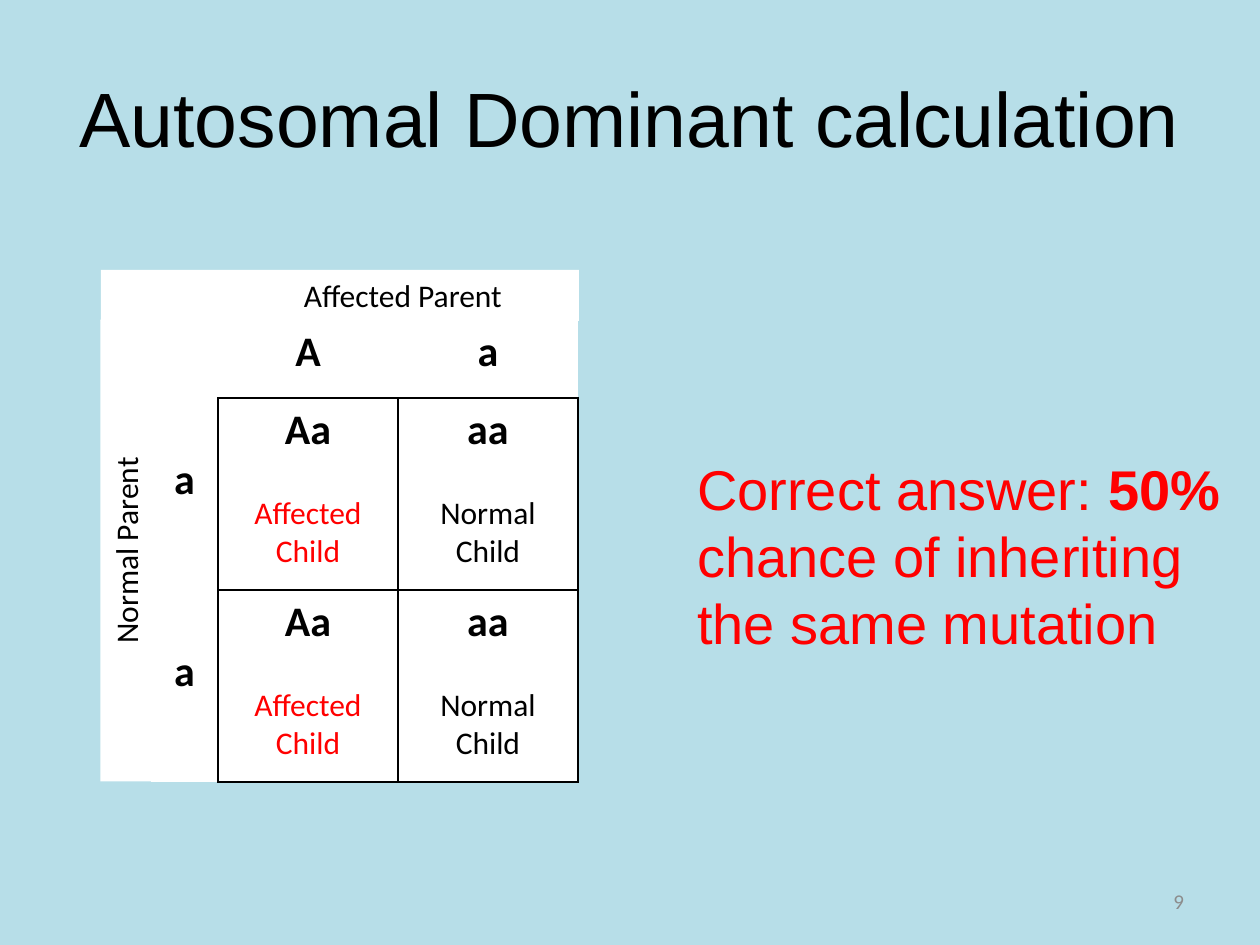
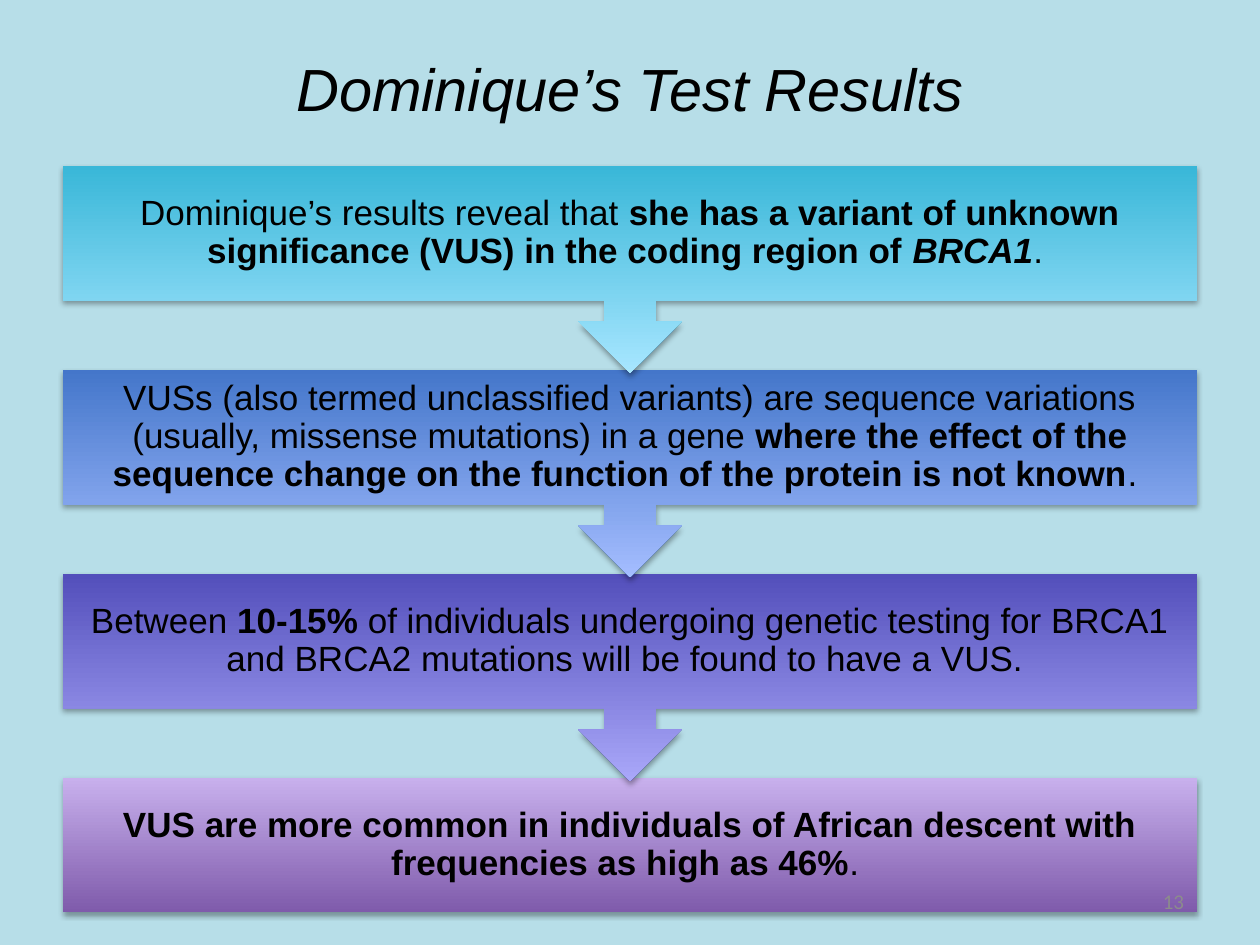
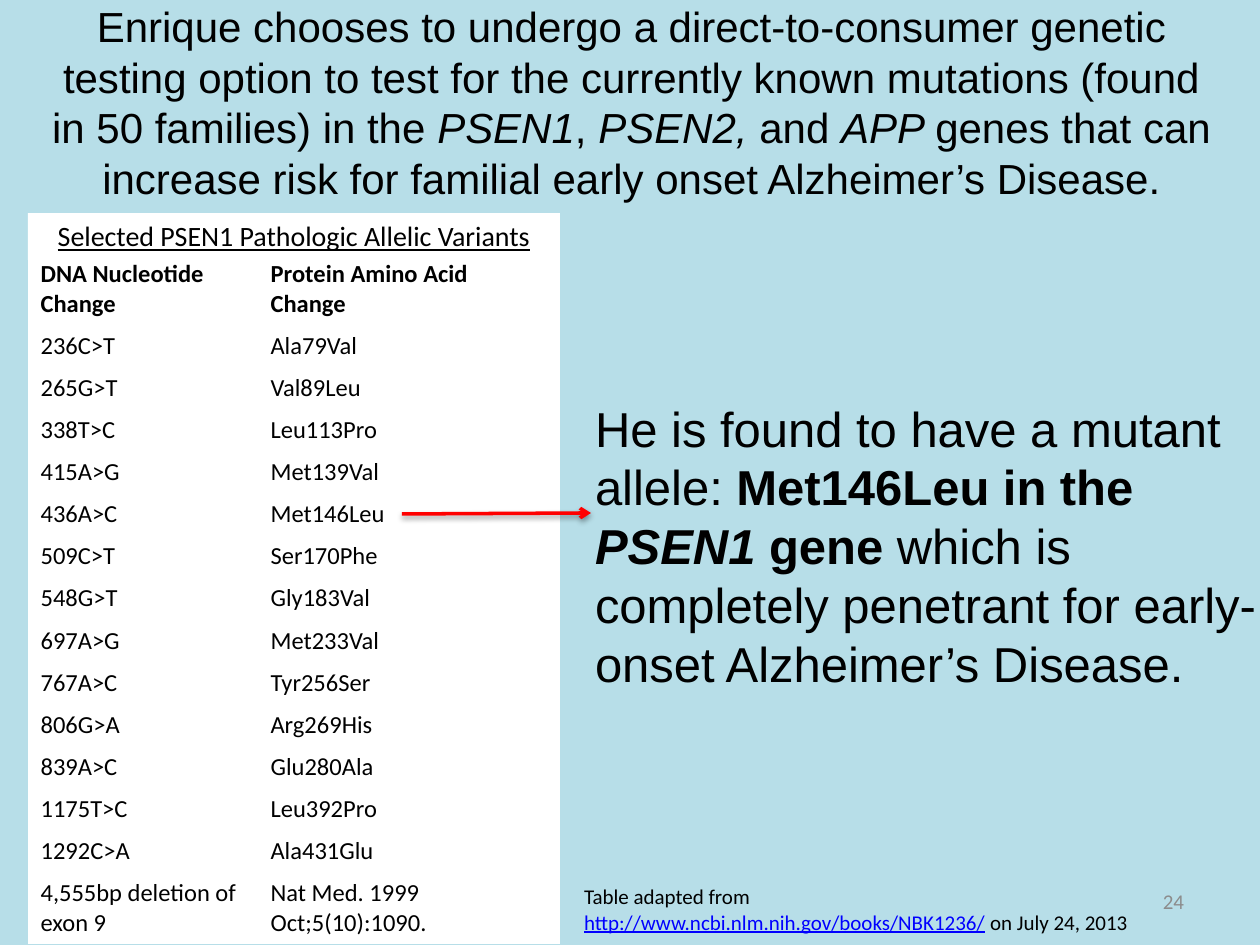
"""Build three genetics teaching slides."""
from dataclasses import dataclass
from typing import NamedTuple

from lxml import etree
from pptx import Presentation
from pptx.dml.color import RGBColor
from pptx.enum.shapes import MSO_CONNECTOR, MSO_SHAPE
from pptx.enum.text import MSO_ANCHOR, PP_ALIGN
from pptx.oxml.ns import qn
from pptx.util import Emu, Pt

LEFT, CENTER, RIGHT = PP_ALIGN.LEFT, PP_ALIGN.CENTER, PP_ALIGN.RIGHT
TOP, MIDDLE = MSO_ANCHOR.TOP, MSO_ANCHOR.MIDDLE
RECTANGLE, CALLOUT = MSO_SHAPE.RECTANGLE, MSO_SHAPE.UP_ARROW_CALLOUT
STRAIGHT = MSO_CONNECTOR.STRAIGHT
PX_PER_INCH = 126
SLIDE_WIDTH, SLIDE_HEIGHT = 1260, 945


@dataclass(frozen=True)
class Theme:
    background: str = "B7DEE8"
    panel: str = "FFFFFF"
    ink: str = "000000"
    accent: str = "FF0000"
    link: str = "0000FF"
    muted: str = "8C8C8C"
    heading_font: str = "Arial"
    table_font: str = "Calibri"
    title: int = 44
    subtitle: int = 34
    answer: int = 32
    finding: int = 28
    lead: int = 24
    allele: int = 24
    step: int = 20
    label: int = 18
    caption: int = 16
    row: int = 14
    small: int = 12


THEME = Theme()


class Box(NamedTuple):
    left: int
    top: int
    width: int
    height: int


class Insets(NamedTuple):
    left: int = 13
    top: int = 6
    right: int = 13
    bottom: int = 6


@dataclass(frozen=True)
class Span:
    text: str
    bold: bool = False
    italic: bool = False
    underline: bool = False
    color: str | None = None


@dataclass(frozen=True)
class Step:
    dark: str
    light: str
    spans: list[Span]


STEPS = [
    Step("39B7D8", "A7E6FF", [
        Span("Dominique’s results reveal that "),
        Span("she has a variant of unknown significance (VUS) in the coding region of ", bold=True),
        Span("BRCA1", bold=True, italic=True),
        Span(". "),
    ]),
    Step("4476CA", "A4BDFF", [
        Span("VUSs (also termed unclassified variants) are sequence variations "
             "(usually, missense mutations) in a gene "),
        Span("where the effect of the sequence change on the function of the protein is not known",
             bold=True),
        Span(". "),
    ]),
    Step("534FBB", "A9A7F9", [
        Span("Between "),
        Span("10-15% ", bold=True),
        Span("of individuals undergoing genetic testing for BRCA1 and BRCA2 mutations "
             "will be found to have a VUS. "),
    ]),
    Step("7F5BAB", "C8B0ED", [
        Span("VUS are more common in individuals of African descent with frequencies "
             "as high as 46%", bold=True),
        Span(". "),
    ]),
]

VARIANTS = [
    ("DNA Nucleotide Change", "Protein Amino Acid Change"),
    ("236C>T", "Ala79Val"),
    ("265G>T", "Val89Leu"),
    ("338T>C", "Leu113Pro"),
    ("415A>G", "Met139Val"),
    ("436A>C", "Met146Leu"),
    ("509C>T", "Ser170Phe"),
    ("548G>T", "Gly183Val"),
    ("697A>G", "Met233Val"),
    ("767A>C", "Tyr256Ser"),
    ("806G>A", "Arg269His"),
    ("839A>C", "Glu280Ala"),
    ("1175T>C", "Leu392Pro"),
    ("1292C>A", "Ala431Glu"),
    ("4,555bp deletion of exon 9", "Nat Med. 1999 Oct;5(10):1090."),
]


def px(length: int) -> Emu:
    return Emu(round(length * 914400 / PX_PER_INCH))


def place(box: Box) -> list[Emu]:
    return [px(length) for length in box]


def rgb(color: str) -> RGBColor:
    return RGBColor.from_string(color)


def write(frame, spans: list[Span], *, size: int, font: str = THEME.heading_font,
          color: str = THEME.ink, align=LEFT, line_spacing: float | None = None,
          space_before: int = 0) -> None:
    first = frame.paragraphs[0]
    paragraph = frame.add_paragraph() if first.runs else first
    paragraph.alignment = align
    paragraph.space_before = Pt(space_before)
    if line_spacing:
        paragraph.line_spacing = line_spacing
    for span in spans:
        run = paragraph.add_run()
        run.text = span.text
        run.font.name, run.font.size = font, Pt(size)
        run.font.bold, run.font.italic = span.bold, span.italic
        run.font.underline = span.underline
        run.font.color.rgb = rgb(span.color or color)


def set_frame(frame, anchor=TOP, insets: Insets = Insets()) -> None:
    frame.word_wrap = True
    frame.vertical_anchor = anchor
    frame.margin_left, frame.margin_top, frame.margin_right, frame.margin_bottom = place(insets)


def add_text(slide, box: Box, spans: list[Span], *, anchor=TOP, insets: Insets = Insets(),
             **text_format) -> None:
    frame = slide.shapes.add_textbox(*place(box)).text_frame
    set_frame(frame, anchor, insets)
    write(frame, spans, **text_format)


def add_panel(slide, box: Box, span: Span, *, size: int, insets: Insets = Insets(),
              rotation: int = 0) -> None:
    panel = slide.shapes.add_shape(RECTANGLE, *place(box))
    panel.rotation = rotation
    panel.shadow.inherit = False
    panel.fill.solid()
    panel.fill.fore_color.rgb = rgb(THEME.panel)
    panel.line.fill.background()
    set_frame(panel.text_frame, insets=insets)
    write(panel.text_frame, [span], size=size, font=THEME.table_font, align=CENTER)


def cast_shadow(shape, opacity: int, distance: int) -> None:
    effects = etree.SubElement(shape.element.spPr, qn("a:effectLst"))
    shadow = etree.SubElement(effects, qn("a:outerShdw"), blurRad="40000", dist=str(distance),
                              dir="5400000", rotWithShape="0")
    shade = etree.SubElement(shadow, qn("a:srgbClr"), val=THEME.ink)
    etree.SubElement(shade, qn("a:alpha"), val=str(opacity * 1000))


def style_cell(cell, ruled_sides: str = "") -> None:
    properties = cell._tc.get_or_add_tcPr()
    for side in "LRTB":
        border = etree.SubElement(properties, qn(f"a:ln{side}"), w="12700")
        if side in ruled_sides:
            fill = etree.SubElement(border, qn("a:solidFill"))
            etree.SubElement(fill, qn("a:srgbClr"), val=THEME.ink)
        else:
            etree.SubElement(border, qn("a:noFill"))
    cell.fill.solid()
    cell.fill.fore_color.rgb = rgb(THEME.panel)


def add_grid(slide, left: int, top: int, widths: list[int], heights: list[int]):
    box = Box(left, top, sum(widths), sum(heights))
    table = slide.shapes.add_table(len(heights), len(widths), *place(box)).table
    table.first_row = table.horz_banding = False
    for column, width in zip(table.columns, widths):
        column.width = px(width)
    for row, height in zip(table.rows, heights):
        row.height = px(height)
    return table


def add_slide(deck):
    slide = deck.slides.add_slide(deck.slide_layouts[6])
    slide.background.fill.solid()
    slide.background.fill.fore_color.rgb = rgb(THEME.background)
    return slide


def add_title(slide, title: Span, top: int, size: int) -> None:
    add_text(slide, Box(63, top, 1134, 158), [title], size=size, align=CENTER, anchor=MIDDLE)


def add_page_number(slide, number: int) -> None:
    add_text(slide, Box(903, 876, 294, 50), [Span(str(number))], size=THEME.small,
             font=THEME.table_font, color=THEME.muted, align=RIGHT, anchor=MIDDLE)


def add_punnett_square(slide) -> None:
    square = add_grid(slide, 151, 320, [67, 180, 180], [78, 192, 192])
    allele_format = dict(size=THEME.allele, font=THEME.table_font, align=CENTER)
    style_cell(square.cell(0, 0))
    children = [("A", "Aa", "Affected Child", THEME.accent),
                ("a", "aa", "Normal Child", THEME.ink)]
    for column, (allele, genotype, outcome, color) in enumerate(children, 1):
        header = square.cell(0, column)
        style_cell(header, "B")
        write(header.text_frame, [Span(allele, bold=True)], **allele_format)
        for row in (1, 2):
            child = square.cell(row, column)
            style_cell(child, "LRTB")
            write(child.text_frame, [Span(genotype, bold=True)], **allele_format)
            write(child.text_frame, [Span(outcome)], size=THEME.label, font=THEME.table_font,
                  color=color, align=CENTER, space_before=22)
    for row in (1, 2):
        header = square.cell(row, 0)
        style_cell(header, "R")
        header.margin_top = px(57)
        write(header.text_frame, [Span("a", bold=True)], **allele_format)


def build_calculation(deck) -> None:
    slide = add_slide(deck)
    add_title(slide, Span("Autosomal Dominant calculation"), 38, THEME.title)
    add_text(slide, Box(636, 442, 624, 500),
             [Span("Correct answer: "), Span("50%", bold=True),
              Span(" chance of inheriting the same mutation")],
             size=THEME.answer, color=THEME.accent, insets=Insets(left=61, top=12))
    add_page_number(slide, 9)
    add_punnett_square(slide)
    add_panel(slide, Box(101, 270, 478, 51), Span("Affected Parent"), size=THEME.label,
              insets=Insets(left=139))
    add_panel(slide, Box(-105, 525, 462, 51), Span("Normal Parent"), size=THEME.label,
              rotation=270)


def add_step(slide, step: Step, top: int, is_last: bool) -> None:
    box = Box(63, top, 1134, 134)
    outline = box if is_last else box._replace(height=207)
    shape = slide.shapes.add_shape(RECTANGLE if is_last else CALLOUT, *place(outline))
    shape.rotation = 0 if is_last else 180
    shape.fill.gradient()
    shape.fill.gradient_angle = 90
    for stop, color in zip(shape.fill.gradient_stops, (step.dark, step.light)):
        stop.color.rgb = rgb(color)
    shape.line.fill.background()
    cast_shadow(shape, 35, 23000)
    add_text(slide, box, step.spans, size=THEME.step, align=CENTER, anchor=MIDDLE,
             insets=Insets(20, 20, 20, 20), line_spacing=0.9)


def build_results(deck) -> None:
    slide = add_slide(deck)
    add_title(slide, Span("Dominique’s Test Results", italic=True), 9, THEME.subtitle)
    last = len(STEPS) - 1
    for index in range(last, -1, -1):
        add_step(slide, STEPS[index], 166 + 204 * index, index == last)
    add_page_number(slide, 13)


def add_variant_table(slide) -> None:
    heights = [72] + [42] * (len(VARIANTS) - 2) + [72]
    table = add_grid(slide, 28, 253, [230, 302], heights)
    for row, variant in enumerate(VARIANTS):
        for column, text in enumerate(variant):
            cell = table.cell(row, column)
            style_cell(cell)
            write(cell.text_frame, [Span(text, bold=row == 0)], size=THEME.row,
                  font=THEME.table_font)


def add_finding_arrow(slide) -> None:
    arrow = slide.shapes.add_connector(STRAIGHT, px(402), px(514), px(591), px(513))
    arrow.line.color.rgb = rgb(THEME.accent)
    arrow.line.width = Pt(2)
    etree.SubElement(arrow.line._get_or_add_ln(), qn("a:tailEnd"), type="arrow")
    cast_shadow(arrow, 38, 20000)


def build_variants(deck) -> None:
    slide = add_slide(deck)
    add_text(slide, Box(534, 323, 726, 399),
             [Span("He is found to have a mutant allele: "),
              Span("Met146Leu in the ", bold=True),
              Span("PSEN1 ", bold=True, italic=True),
              Span("gene", bold=True),
              Span(" which is completely penetrant for early-onset Alzheimer’s Disease.")],
             size=THEME.finding, insets=Insets(left=61, top=75, right=2))
    add_text(slide, Box(38, 0, 1187, 262),
             [Span("Enrique chooses to undergo a direct-to-consumer genetic testing option to "
                   "test for the currently known mutations (found in 50 families) in the "),
              Span("PSEN1", italic=True), Span(", "),
              Span("PSEN2, ", italic=True), Span("and "),
              Span("APP ", italic=True),
              Span("genes that can increase risk for familial early onset Alzheimer’s Disease.")],
             size=THEME.lead, align=CENTER, insets=Insets(top=1))
    add_page_number(slide, 24)
    add_text(slide, Box(571, 878, 597, 63),
             [Span("Table adapted from "),
              Span("http://www.ncbi.nlm.nih.gov/books/NBK1236/", underline=True,
                   color=THEME.link),
              Span(" on July 24, 2013")],
             size=THEME.small, font=THEME.table_font)
    add_variant_table(slide)
    add_panel(slide, Box(28, 213, 532, 47),
              Span("Selected PSEN1 Pathologic Allelic Variants", underline=True),
              size=THEME.caption)
    add_finding_arrow(slide)


def main() -> None:
    deck = Presentation()
    deck.slide_width, deck.slide_height = px(SLIDE_WIDTH), px(SLIDE_HEIGHT)
    build_calculation(deck)
    build_results(deck)
    build_variants(deck)
    deck.save("out.pptx")


if __name__ == "__main__":
    main()
